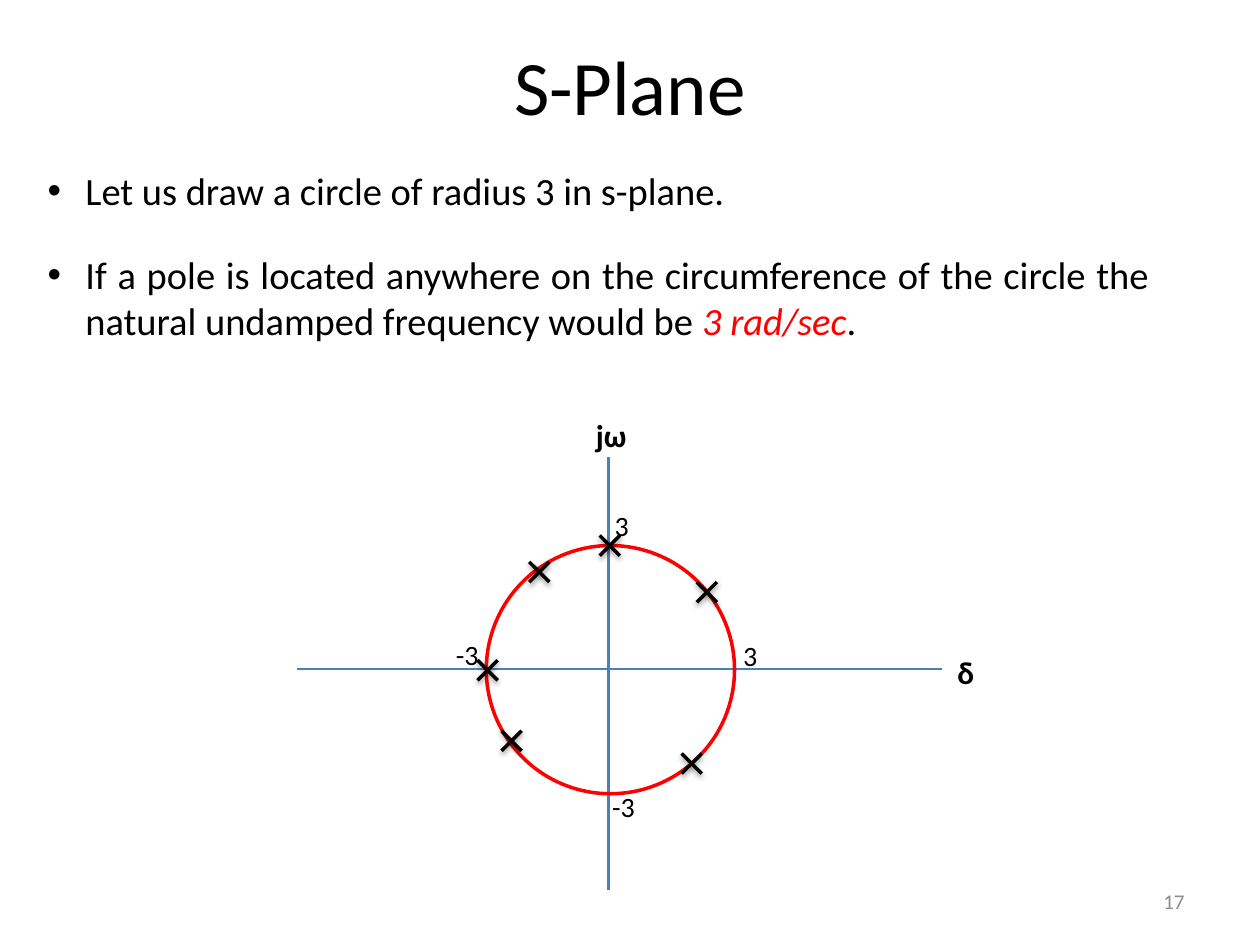
from lxml.etree import SubElement
from pptx import Presentation
from pptx.dml.color import RGBColor
from pptx.enum.shapes import MSO_CONNECTOR as Connector, MSO_SHAPE as Shape
from pptx.enum.text import MSO_ANCHOR as Anchor, MSO_AUTO_SIZE as AutoSize, PP_ALIGN as Align
from pptx.oxml.ns import qn
from pptx.util import Inches, Pt

BLACK = RGBColor(0x00, 0x00, 0x00)
RED = RGBColor(0xFF, 0x00, 0x00)
BLUE = RGBColor(0x4B, 0x7E, 0xBC)
GRAY = RGBColor(0x8C, 0x8C, 0x8C)


class SlideBuilder:
    """Holds the style and the current slide."""

    font_name = "Calibri"
    bullet_indent = 0.3
    pole_half = 0.08

    def __init__(self, slide):
        self.slide = slide

    def text(self, box, runs, size, color=BLACK, align=Align.LEFT, bold=False,
             **frame_format):
        """Add a text box; runs are (text, format overrides) pairs."""
        shape = self.slide.shapes.add_textbox(*map(Inches, box))
        frame = shape.text_frame
        for name, value in {"word_wrap": True, **frame_format}.items():
            setattr(frame, name, value)
        paragraph = frame.paragraphs[0]
        paragraph.alignment = align
        for content, overrides in runs:
            run = paragraph.add_run()
            run.text = content
            values = {"name": self.font_name, "size": Pt(size), "bold": bold,
                      **overrides}
            run.font.color.rgb = values.pop("color", color)
            for name, value in values.items():
                setattr(run.font, name, value)
        return paragraph

    def bullet(self, box, runs):
        paragraph = self.text(box, runs, 22, align=Align.JUSTIFY,
                              auto_size=AutoSize.SHAPE_TO_FIT_TEXT)
        properties = paragraph._p.get_or_add_pPr()
        properties.set("marL", str(Inches(self.bullet_indent)))
        properties.set("indent", str(-Inches(self.bullet_indent)))
        SubElement(properties, qn("a:buFont"), typeface="Arial")
        SubElement(properties, qn("a:buChar"), char="•")

    def label(self, box, content, size=16, bold=False):
        self.text(box, [(content, {})], size, bold=bold, word_wrap=False,
                  auto_size=AutoSize.SHAPE_TO_FIT_TEXT)

    def line(self, start, end, color, width, shadow=False):
        connector = self.slide.shapes.add_connector(
            Connector.STRAIGHT, *map(Inches, (*start, *end)))
        connector.line.color.rgb = color
        connector.line.width = Pt(width)
        effects = SubElement(connector._element.spPr, qn("a:effectLst"))
        if shadow:
            outer = SubElement(effects, qn("a:outerShdw"), blurRad=str(Pt(3.1)),
                               dist=str(Pt(1.6)), dir="5400000", rotWithShape="0")
            tint = SubElement(outer, qn("a:srgbClr"), val=str(BLACK))
            SubElement(tint, qn("a:alpha"), val="38000")

    def circle(self, left, top, diameter):
        shape = self.slide.shapes.add_shape(
            Shape.OVAL, *map(Inches, (left, top, diameter, diameter)))
        shape.shadow.inherit = False
        shape.fill.background()
        shape.line.color.rgb = RED
        shape.line.width = Pt(2)

    def pole(self, x, y):
        """Add a cross centred on x, y."""
        half = self.pole_half
        for side in (half, -half):
            self.line((x + side, y - half), (x - side, y + half), BLACK, 2, shadow=True)


def main():
    presentation = Presentation()
    presentation.slide_width = Inches(10)
    presentation.slide_height = Inches(7.5)
    builder = SlideBuilder(presentation.slides.add_slide(presentation.slide_layouts[6]))

    # Title and bullets
    builder.text((0.5, 0.05, 9, 1.25), [("S-Plane", {})], 44, align=Align.CENTER,
                 vertical_anchor=Anchor.MIDDLE)
    builder.bullet((0.28, 1.28, 8.94, 0.47),
                   [("Let us draw a circle of radius 3 in s-plane.", {})])
    builder.bullet((0.28, 1.94, 8.94, 0.84), [
        ("If a pole is located anywhere on the circumference of the circle the "
         "natural undamped frequency would be ", {}),
        ("3 rad/sec", {"color": RED, "italic": True}),
        (".", {}),
    ])

    # Axes
    builder.line((4.83, 3.63), (4.83, 7.06), BLUE, 1.5)
    builder.line((7.48, 5.31), (2.36, 5.31), BLUE, 1.5)
    builder.label((7.5, 5.13, 0.34, 0.4), "δ", 18, bold=True)
    builder.label((4.63, 3.25, 0.45, 0.4), "jω", 18, bold=True)

    # Circle of radius 3 and its axis crossings
    builder.circle(3.86, 4.33, 1.97)
    for left, top, width, content in (
            (4.78, 3.99, 0.32, "3"), (3.52, 5.01, 0.38, "-3"),
            (4.76, 6.22, 0.38, "-3"), (5.8, 5.02, 0.32, "3")):
        builder.label((left, top, width, 0.37), content)

    # Poles on the circumference
    for x, y in ((4.28, 4.54), (5.61, 4.7), (5.49, 6.06),
                 (4.06, 5.88), (3.87, 5.32), (4.84, 4.33)):
        builder.pole(x, y)

    # Slide number
    builder.text((7.17, 6.95, 2.33, 0.4), [("17", {})], 12, GRAY, Align.RIGHT,
                 vertical_anchor=Anchor.MIDDLE)

    presentation.save("out.pptx")


if __name__ == "__main__":
    main()
